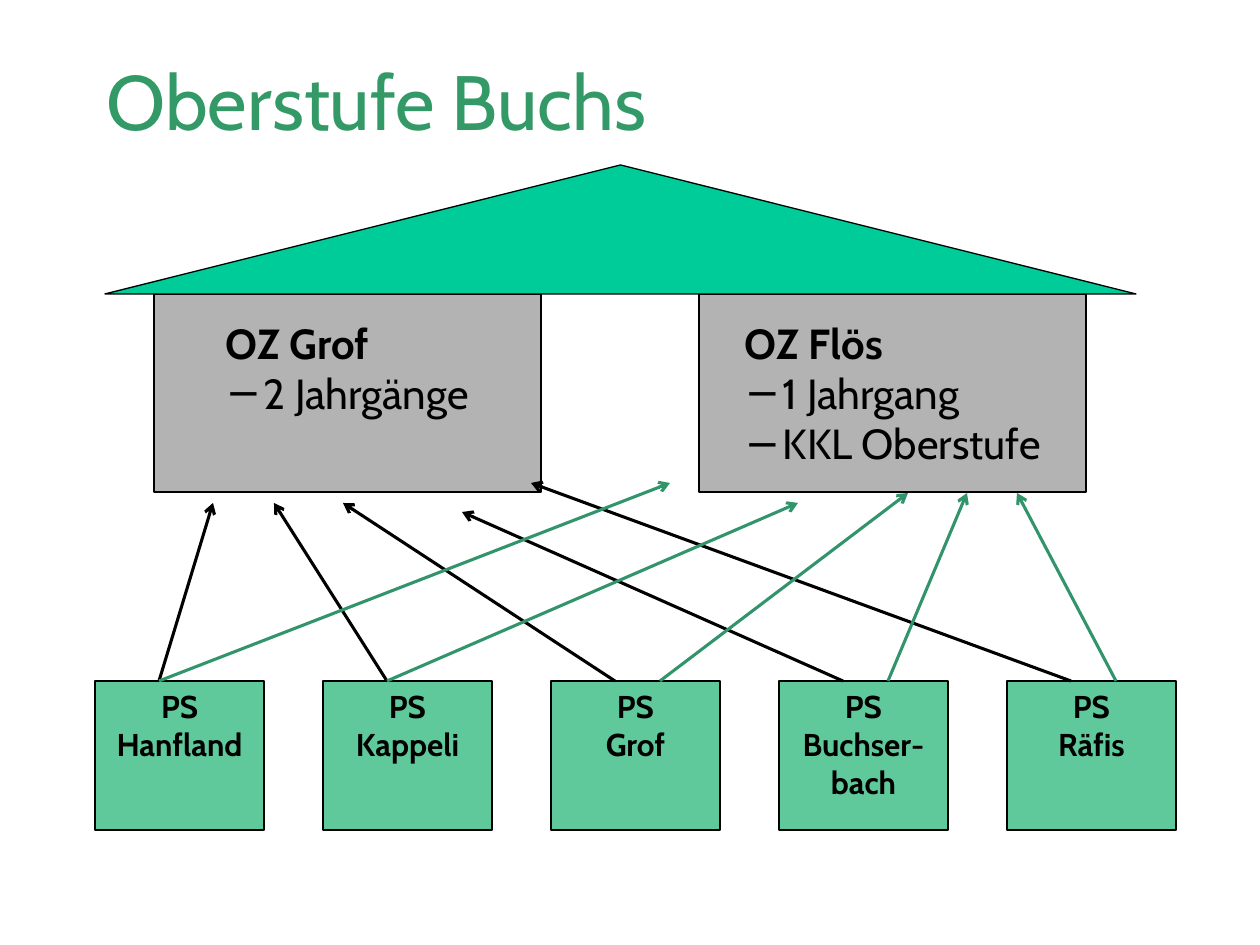
from lxml.etree import SubElement
from pptx import Presentation
from pptx.dml.color import RGBColor
from pptx.enum.shapes import MSO_CONNECTOR, MSO_SHAPE
from pptx.enum.text import MSO_ANCHOR, PP_ALIGN
from pptx.oxml.ns import qn
from pptx.util import Emu, Pt

FONT = "Cabin"
BLACK, GREEN = "000000", "32946A"
SCHOOL_LEFT, SCHOOL_TOP, SCHOOL_STEP = 95, 681, 228
SCHOOLS = ["PS Hanfland", "PS\nKappeli", "PS\vGrof", "PS\vBuchser-\vbach", "PS\vRäfis"]
CENTRES = [
    (154, 72, ["OZ Grof", "2 Jahrgänge"]),
    (699, 46, ["OZ Flös", "1 Jahrgang", "KKL Oberstufe"]),
]
BLACK_ARROWS = [(64, 213, 503), (64, 274, 503), (64, 343, 503), (64, 462, 512), (64, 531, 483)]
GREEN_ARROWS = [(64, 670, 483), (64, 798, 503), (109, 908, 493), (109, 967, 493), (109, 1017, 493)]


def px(value):
    """Turn pixels into EMU."""
    return Emu(round(value * 914400 / 126))


def colour(code):
    """Turn a hex string into a colour."""
    return RGBColor.from_string(code)


def style(para, size, bold=False, code=BLACK):
    """Format every run of a paragraph."""
    for span in para.runs:
        font = span.font
        font.name, font.size, font.bold = FONT, Pt(size), bold
        font.color.rgb = colour(code)


def add_title(page, text):
    """Place and format the title."""
    title = page.shapes.title
    title.left, title.top, title.width, title.height = map(px, (94, 45, 774, 110))
    title.text_frame.text = text
    title.text_frame.vertical_anchor = MSO_ANCHOR.MIDDLE
    para = title.text_frame.paragraphs[0]
    para.alignment = PP_ALIGN.LEFT
    style(para, 44, code="339966")


def add_block(page, kind, frame, fill):
    """Add a filled shape with a thin black outline."""
    block = page.shapes.add_shape(kind, *map(px, frame))
    block.shadow.inherit = False
    block.fill.solid()
    block.fill.fore_color.rgb = colour(fill)
    block.line.color.rgb = colour(BLACK)
    block.line.width = Pt(0.75)
    block.text_frame.vertical_anchor = MSO_ANCHOR.TOP
    return block


def add_school(page, left, text):
    """Add a primary school box."""
    frame = (left, SCHOOL_TOP, 169, 149)
    box = add_block(page, MSO_SHAPE.RECTANGLE, frame, "60C99C")
    box.text_frame.text = text
    for para in box.text_frame.paragraphs:
        para.alignment = PP_ALIGN.CENTER
        style(para, 18, bold=True)


def add_dash(para):
    """Give a paragraph a dash bullet with a hanging indent."""
    props = para._p.get_or_add_pPr()
    props.set("marL", str(px(38)))
    props.set("indent", str(-px(38)))
    SubElement(props, qn("a:buFont"), typeface=FONT)
    SubElement(props, qn("a:buChar"), char="−")


def add_centre(page, left, inset, lines):
    """Add an upper school building with a heading and dashed lines."""
    box = add_block(page, MSO_SHAPE.RECTANGLE, (left, 294, 387, 198), "B3B3B3")
    text = box.text_frame
    text.margin_left, text.margin_right, text.margin_top = px(inset), px(0), px(23)
    text.text = "\n".join(lines)
    for index, para in enumerate(text.paragraphs):
        para.alignment = PP_ALIGN.LEFT
        if index:
            add_dash(para)
        style(para, 24, bold=index == 0)


def add_arrow(page, start, end, code):
    """Add a line with an open arrowhead at its end."""
    arrow = page.shapes.add_connector(MSO_CONNECTOR.STRAIGHT, *map(px, start + end))
    arrow.line.color.rgb = colour(code)
    arrow.line.width = Pt(1.75)
    SubElement(arrow.line._get_or_add_ln(), qn("a:tailEnd"), type="arrow")
    SubElement(arrow._element.spPr, qn("a:effectLst"))


def main():
    """Build the slide and save it."""
    deck = Presentation()
    deck.slide_width, deck.slide_height = px(1260), px(945)
    page = deck.slides.add_slide(deck.slide_layouts[5])
    add_title(page, "Oberstufe Buchs")
    for index, text in enumerate(SCHOOLS):
        add_school(page, SCHOOL_LEFT + index * SCHOOL_STEP, text)
    for left, inset, lines in CENTRES:
        add_centre(page, left, inset, lines)
    add_block(page, MSO_SHAPE.ISOSCELES_TRIANGLE, (105, 165, 1031, 129), "00CC99")
    for code, arrows in ((BLACK, BLACK_ARROWS), (GREEN, GREEN_ARROWS)):
        for index, (offset, end_x, end_y) in enumerate(arrows):
            start_x = SCHOOL_LEFT + index * SCHOOL_STEP + offset
            add_arrow(page, (start_x, SCHOOL_TOP), (end_x, end_y), code)
    deck.save("out.pptx")


if __name__ == "__main__":
    main()
